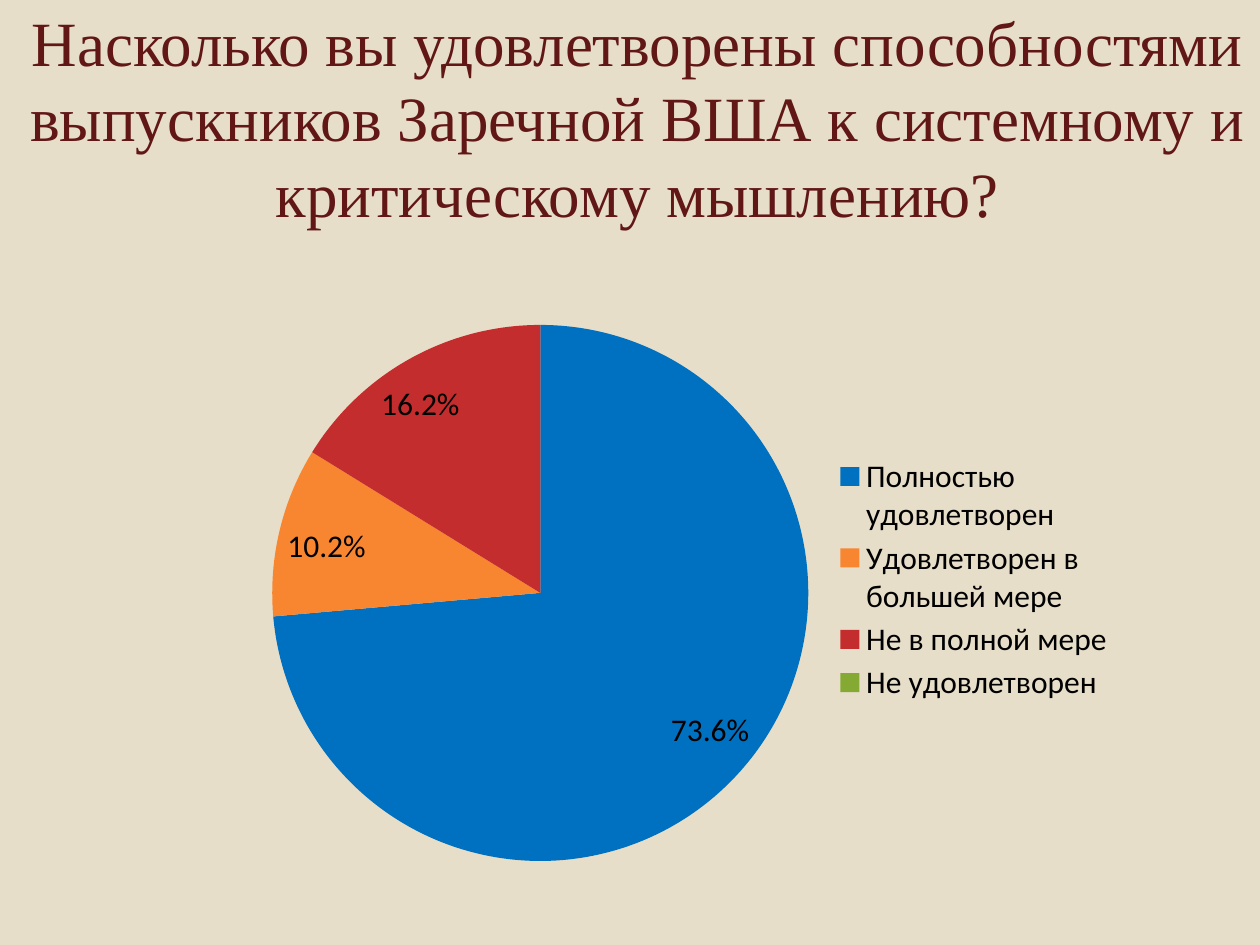
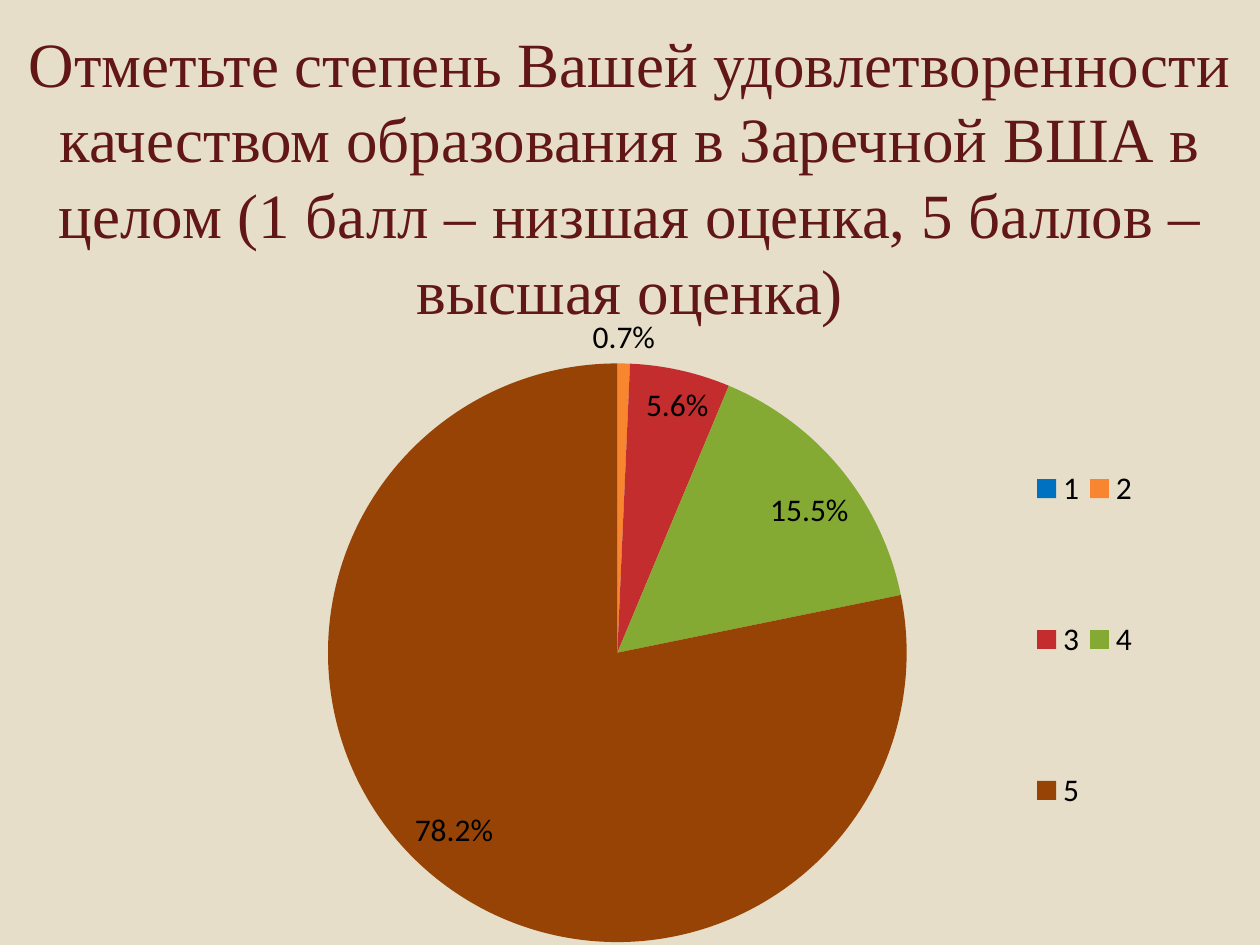
from pptx import Presentation
from pptx.chart.data import CategoryChartData
from pptx.dml.color import RGBColor
from pptx.enum.chart import XL_CHART_TYPE as ChartType
from pptx.enum.chart import XL_LABEL_POSITION as LabelPosition
from pptx.enum.chart import XL_LEGEND_POSITION as LegendPosition
from pptx.enum.text import MSO_ANCHOR, PP_ALIGN
from pptx.oxml import parse_xml
from pptx.oxml.ns import nsdecls
from pptx.util import Cm, Pt

BACKGROUND = "E7DEC9"
TITLE_COLOR = "621717"
LABEL_COLOR = "000000"
SLICE_COLORS = ["0070C0", "F88631", "C32D2E", "84AA33", "964305"]
ACADEMY = "Заречной ВША"


def rgb(value):
    return RGBColor.from_string(value)


def layout_xml(x, y, width, height, inner=False):
    """Manual layout, as fractions of the chart area."""
    target = '<c:layoutTarget val="inner"/>' if inner else ""
    return parse_xml(
        f'<c:layout {nsdecls("c")}><c:manualLayout>{target}'
        '<c:xMode val="edge"/><c:yMode val="edge"/>'
        f'<c:x val="{x}"/><c:y val="{y}"/><c:w val="{width}"/><c:h val="{height}"/>'
        '</c:manualLayout></c:layout>')


# Survey questions; places are left, top, width, height in centimetres
questions = [
    {
        "title": "Насколько вы удовлетворены способностями выпускников "
                 f"{ACADEMY} к системному и критическому мышлению?",
        "title_place": (0.3, 0.76, 25.1, 3.18),
        "chart_place": (3.5, 4.93, 19.2, 13.51),
        "answers": {"Полностью удовлетворен": 73.6,
                    "Удовлетворен в большей мере": 10.2,
                    "Не в полной мере": 16.2,
                    "Не удовлетворен": 0},
        "pie_layout": (0.1, 0.12, 0.57, 0.8),
        "legend_layout": (0.69, 0.31, 0.3, 0.38),
    },
    {
        "title": "Отметьте степень Вашей удовлетворенности качеством образования "
                 f"в {ACADEMY} в целом (1 балл – низшая оценка, "
                 "5 баллов – высшая оценка)",
        "title_place": (0, 0.76, 25.4, 5.56),
        "chart_place": (2.49, 6.12, 21.41, 13.41),
        "answers": {"1": 0, "2": 0.7, "3": 5.6, "4": 15.5, "5": 78.2},
        "pie_layout": (0.19, 0.09, 0.55, 0.87),
        "legend_layout": (0.85, 0.08, 0.11, 0.85),
    },
]

deck = Presentation()
deck.slide_width, deck.slide_height = Cm(25.4), Cm(19.05)

for question in questions:
    page = deck.slides.add_slide(deck.slide_layouts[6])
    page.background.fill.solid()
    page.background.fill.fore_color.rgb = rgb(BACKGROUND)

    # Title
    box = page.shapes.add_textbox(*map(Cm, question["title_place"]))
    box.text_frame.word_wrap = True
    box.text_frame.vertical_anchor = MSO_ANCHOR.MIDDLE
    para = box.text_frame.paragraphs[0]
    para.alignment = PP_ALIGN.CENTER
    span = para.add_run()
    span.text = question["title"]
    span.font.name = "Times New Roman"
    span.font.size = Pt(36)
    span.font.color.rgb = rgb(TITLE_COLOR)

    # Pie chart
    answers = question["answers"]
    data = CategoryChartData()
    data.categories = list(answers)
    data.add_series("Series 1", list(answers.values()))
    chart = page.shapes.add_chart(
        ChartType.PIE, *map(Cm, question["chart_place"]), data).chart
    chart.has_title = False
    chart.font.name = "Calibri"
    chart.font.size = Pt(18)
    chart.font.color.rgb = rgb(LABEL_COLOR)

    # Percent labels
    pie = chart.plots[0]
    pie.vary_by_categories = True
    series = pie.series[0]
    labels = series.data_labels
    labels.show_value = False
    labels.show_percentage = True
    labels.number_format = "0.0%"
    labels.number_format_is_linked = False
    labels.position = LabelPosition.BEST_FIT

    # Slice colours; an empty slice has no label
    for index, value in enumerate(answers.values()):
        fill = series.points[index].format.fill
        fill.solid()
        fill.fore_color.rgb = rgb(SLICE_COLORS[index])
        if value == 0:
            labels._element.insert(0, parse_xml(
                f'<c:dLbl {nsdecls("c")}><c:idx val="{index}"/>'
                '<c:delete val="1"/></c:dLbl>'))

    # Legend and placement of the pie
    chart.has_legend = True
    chart.legend.position = LegendPosition.RIGHT
    chart.legend.include_in_layout = False
    legend_xml = chart.legend._element
    plot_xml = chart._chartSpace.chart.plotArea
    for parent in (legend_xml, plot_xml):
        for old_layout in parent.xpath("c:layout"):
            parent.remove(old_layout)
    legend_xml.xpath("c:legendPos")[0].addnext(layout_xml(*question["legend_layout"]))
    plot_xml.insert(0, layout_xml(*question["pie_layout"], inner=True))

deck.save("out.pptx")
